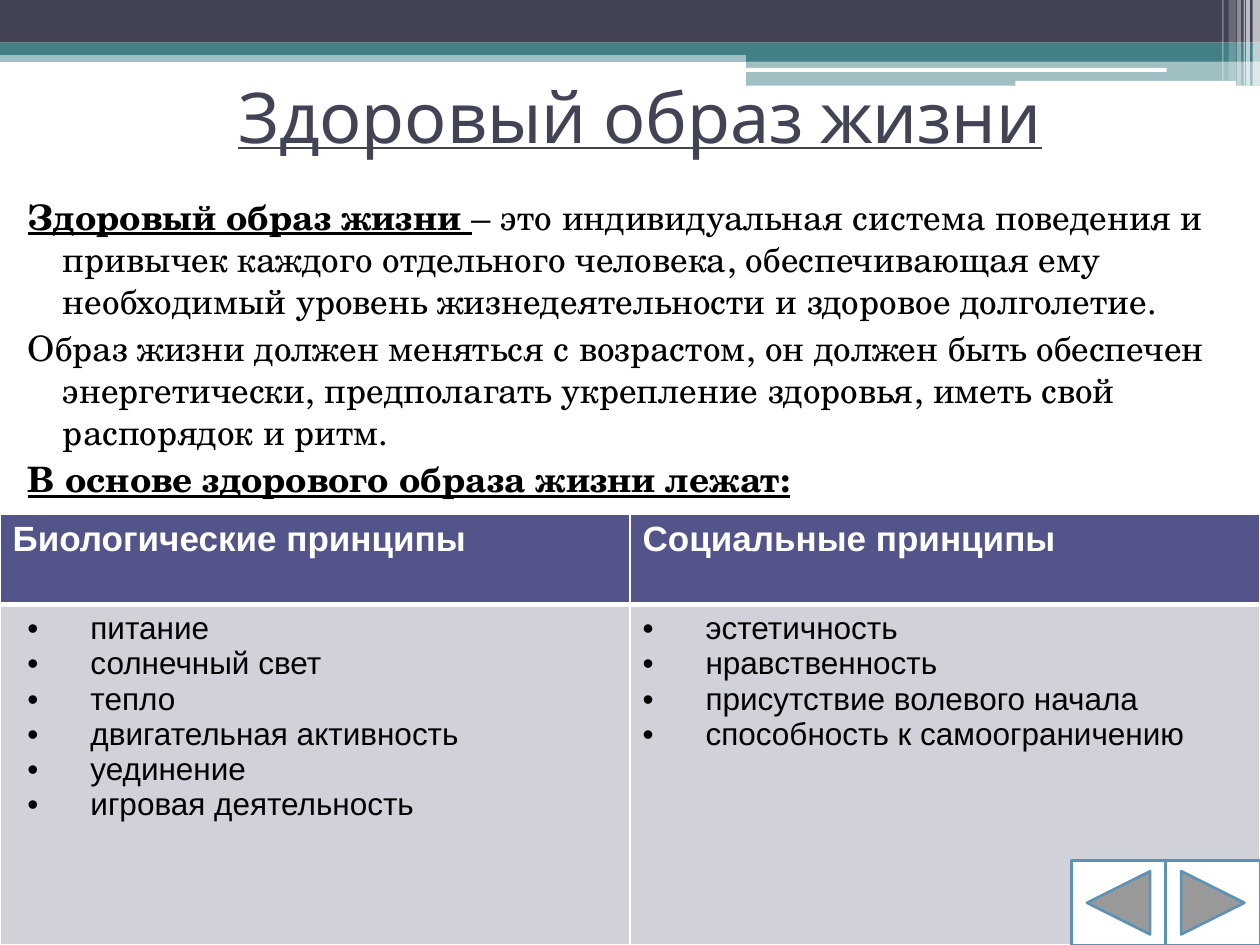
import pptx
import pptx.dml.color
import pptx.enum.shapes
import pptx.enum.text
import pptx.oxml.ns
import pptx.util
from lxml import etree
from pptx.util import Cm

SHAPES = pptx.enum.shapes.MSO_SHAPE
TEAL, NAVY, WHITE, BLACK = "438086", "424456", "FFFFFF", "000000"
HEADER_FILL, BODY_FILL, BUTTON_LINE = "53548A", "D1D1DA", "5C92B5"

# left, top, width, height in cm, colour, opacity in percent
BANDS = [
    (0, 1.02, 25.4, 0.23, TEAL, 50),
    (0, 0, 25.4, 0.86, NAVY, 100),
    (0, 0.86, 25.4, 0.25, TEAL, 100),
    (15.04, 0.99, 10.36, 0.25, TEAL, 100),
    (15.04, 1.22, 10.36, 0.51, TEAL, 50),
]
ROUNDED_BARS = [(15.01, 1.37, 8.51, 0.08), (20.47, 1.63, 4.45, 0.1)]
# left, width, height in cm, opacity in percent
STRIPES = [
    (25.25, 0.15, 1.73, 65),
    (25.12, 0.08, 1.73, 65),
    (25.07, 0.03, 1.73, 60),
    (24.94, 0.08, 1.73, 40),
    (24.77, 0.15, 1.63, 20),
    (24.64, 0.03, 1.63, 30),
]

# Each paragraph is a list of (text, emphasised)
BODY = [
    [("Здоровый образ жизни ", True),
     ("– это индивидуальная система поведения и привычек каждого отдельного "
      "человека, обеспечивающая ему необходимый уровень жизнедеятельности "
      "и здоровое долголетие.", False)],
    [("Образ жизни должен меняться с возрастом, он должен быть обеспечен "
      "энергетически, предполагать укрепление здоровья, иметь свой "
      "распорядок и ритм.", False)],
    [("В основе здорового образа жизни лежат:", True)],
]

# heading, left indent of the items in cm, items
PRINCIPLES = [
    ("Биологические принципы", 1.57,
     ["питание", "солнечный свет", "тепло", "двигательная активность",
      "уединение", "игровая деятельность"]),
    ("Социальные принципы", 1.27,
     ["эстетичность", "нравственность", "присутствие волевого начала",
      "способность к самоограничению"]),
]


def colour(value):
    return pptx.dml.color.RGBColor.from_string(value)


def add_element(parent, tag, **attributes):
    return etree.SubElement(parent, pptx.oxml.ns.qn(tag), attributes)


def set_fill(fill, value, opacity=100):
    fill.solid()
    fill.fore_color.rgb = colour(value)
    if opacity < 100:
        add_element(fill._xPr.find(".//" + pptx.oxml.ns.qn("a:srgbClr")),
                    "a:alpha", val=str(opacity * 1000))


def set_font(font, name, size, value, bold=None, underline=None):
    font.name = name
    font.size = pptx.util.Pt(size)
    font.color.rgb = colour(value)
    font.bold = bold
    font.underline = underline


def set_indent(paragraph, left, first):
    properties = paragraph._p.get_or_add_pPr()
    properties.set("marL", str(Cm(left)))
    properties.set("indent", str(Cm(first)))
    return properties


def add_block(slide, box, fill, opacity=100, kind=SHAPES.RECTANGLE):
    shape = slide.shapes.add_shape(kind, *map(Cm, box))
    shape.shadow.inherit = False
    shape.line.fill.background()
    set_fill(shape.fill, fill, opacity)
    return shape


def add_decoration(slide):
    for *box, fill, opacity in BANDS:
        add_block(slide, box, fill, opacity)
    for box in ROUNDED_BARS:
        add_block(slide, box, WHITE, kind=SHAPES.ROUNDED_RECTANGLE)
    for left, width, height, opacity in STRIPES:
        add_block(slide, (left, 0, width, height), WHITE, opacity)


def add_text_frame(slide, box):
    frame = slide.shapes.add_textbox(*map(Cm, box)).text_frame
    frame.word_wrap = True
    return frame


def add_title(slide):
    frame = add_text_frame(slide, (1.47, 0.84, 22.86, 2.97))
    frame.vertical_anchor = pptx.enum.text.MSO_ANCHOR.MIDDLE
    paragraph = frame.paragraphs[0]
    paragraph.text = "Здоровый образ жизни"
    paragraph.alignment = pptx.enum.text.PP_ALIGN.CENTER
    set_font(paragraph.font, "Karla", 40, NAVY, underline=True)


def add_body(slide):
    frame = add_text_frame(slide, (0, 3.81, 25.4, 15.24))
    for index, runs in enumerate(BODY):
        paragraph = frame.add_paragraph() if index else frame.paragraphs[0]
        set_indent(paragraph, 1.02, -0.71)
        paragraph.space_before = pptx.util.Pt(3)
        set_font(paragraph.font, "TeX Gyre Schola", 20, BLACK)
        for text, emphasised in runs:
            run = paragraph.add_run()
            run.text = text
            run.font.bold = run.font.underline = emphasised


def style_cell(cell, fill, top, bottom):
    """Fill a cell and give it white borders, 1 pt wide at the sides."""
    properties = cell._tc.get_or_add_tcPr()
    for side, width in (("L", 1), ("R", 1), ("T", top), ("B", bottom)):
        line = add_element(properties, "a:ln" + side,
                           w=str(pptx.util.Pt(width)))
        add_element(add_element(line, "a:solidFill"), "a:srgbClr", val=WHITE)
    set_fill(cell.fill, fill)


def add_principles_table(slide):
    table = slide.shapes.add_table(
        2, len(PRINCIPLES), Cm(0), Cm(10.36), Cm(25.4), Cm(8.69)).table
    table.rows[0].height, table.rows[1].height = Cm(1.83), Cm(6.86)
    for column, (heading, indent, items) in enumerate(PRINCIPLES):
        header, body = table.cell(0, column), table.cell(1, column)
        style_cell(header, HEADER_FILL, top=1, bottom=3)
        style_cell(body, BODY_FILL, top=3, bottom=1)
        header.text = heading
        set_font(header.text_frame.paragraphs[0].font, "Arial", 20, WHITE, True)
        body.text = "\n".join(items)
        for paragraph in body.text_frame.paragraphs:
            properties = set_indent(paragraph, indent, -1.27)
            add_element(properties, "a:buFont", typeface="Arial")
            add_element(properties, "a:buChar", char="•")
            set_font(paragraph.font, "Arial", 18, BLACK, False)


def add_navigation(slide):
    kinds = (SHAPES.ACTION_BUTTON_BACK_OR_PREVIOUS,
             SHAPES.ACTION_BUTTON_FORWARD_OR_NEXT)
    width = 1.9
    for index, kind in enumerate(kinds):
        left = 25.4 - width * (len(kinds) - index)
        button = add_block(slide, (left, 17.35, width, 1.7), WHITE, kind=kind)
        button.line.color.rgb = colour(BUTTON_LINE)
        button.line.width = pptx.util.Pt(1.5)


def main():
    presentation = pptx.Presentation()
    presentation.slide_width, presentation.slide_height = Cm(25.4), Cm(19.05)
    slide = presentation.slides.add_slide(presentation.slide_layouts[6])
    add_decoration(slide)
    add_title(slide)
    add_body(slide)
    add_principles_table(slide)
    add_navigation(slide)
    presentation.save("out.pptx")


if __name__ == "__main__":
    main()
